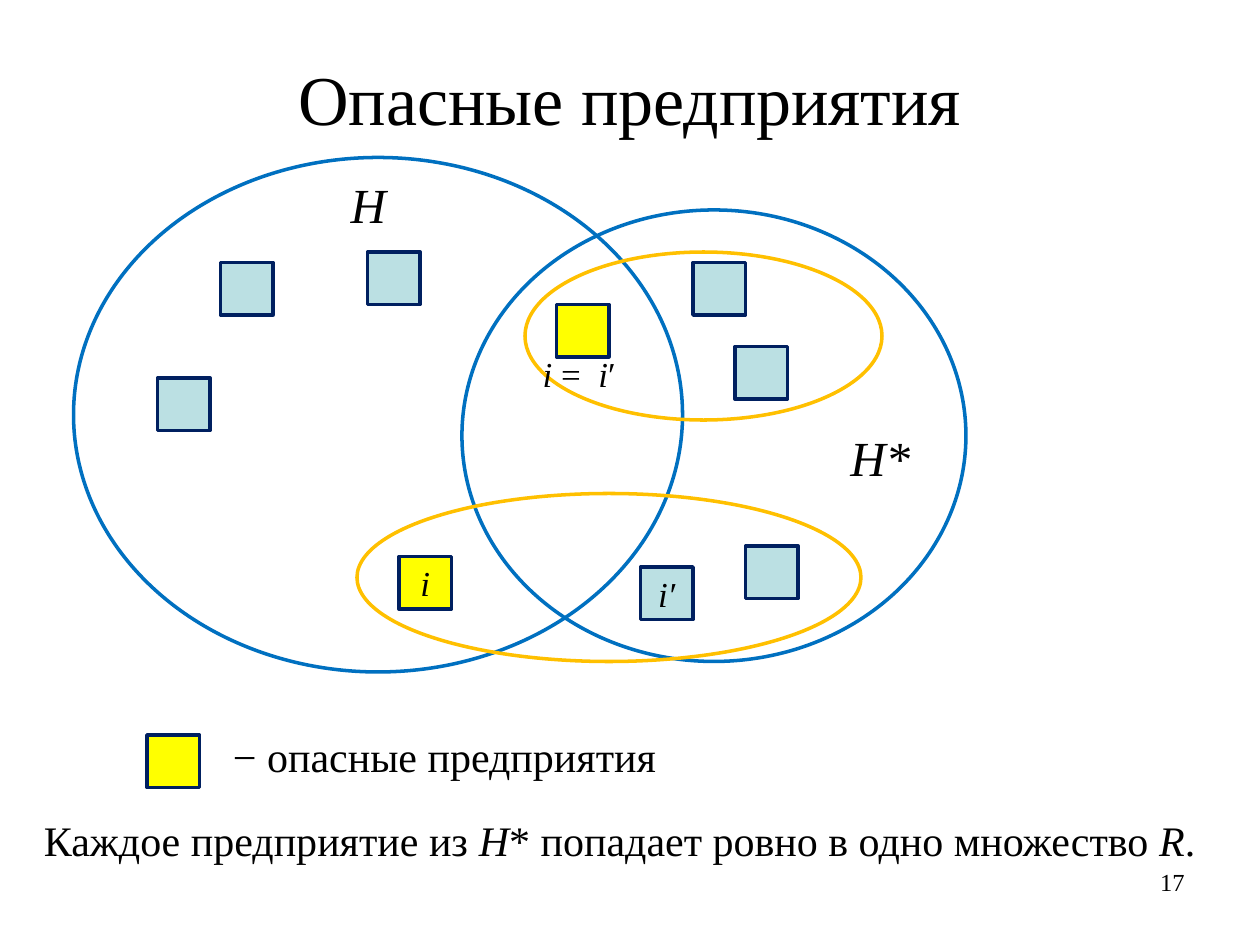
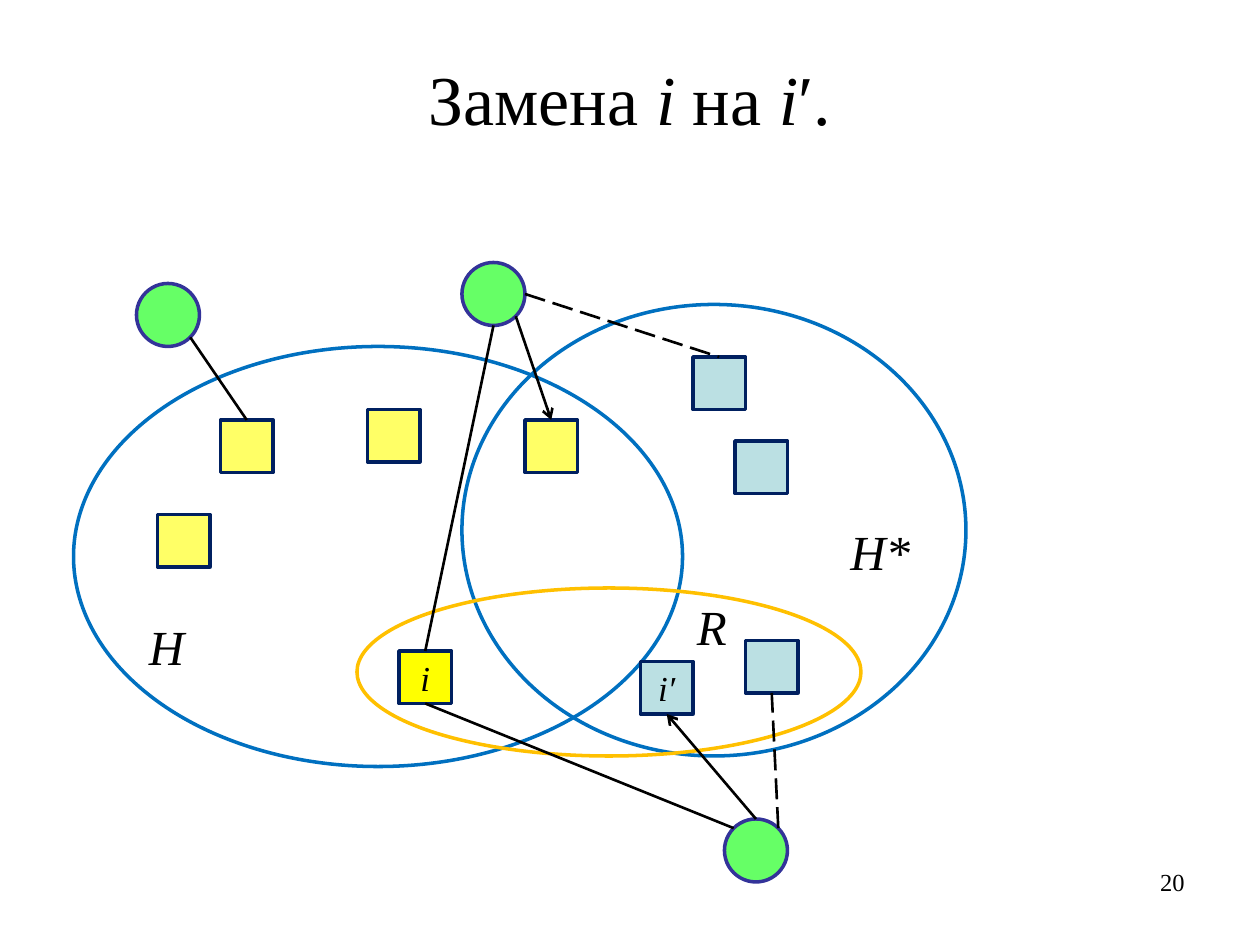
from math import cos, radians, sin
from typing import NamedTuple

from lxml import etree
from pptx import Presentation
from pptx.dml.color import RGBColor
from pptx.enum.dml import MSO_LINE
from pptx.enum.shapes import MSO_CONNECTOR, MSO_SHAPE
from pptx.enum.text import MSO_ANCHOR, MSO_AUTO_SIZE, PP_ALIGN
from pptx.oxml.ns import qn
from pptx.shapes.autoshape import Shape
from pptx.slide import Slide
from pptx.text.text import TextFrame
from pptx.util import Cm, Length, Pt

BLACK = RGBColor(0x00, 0x00, 0x00)
SET_BLUE = RGBColor(0x00, 0x70, 0xC0)
GROUP_ORANGE = RGBColor(0xFF, 0xC0, 0x00)
FACILITY_BORDER = RGBColor(0x00, 0x20, 0x60)
FACILITY_BLUE = RGBColor(0xBB, 0xE0, 0xE3)
YELLOW = RGBColor(0xFF, 0xFF, 0x00)
PALE_YELLOW = RGBColor(0xFF, 0xFF, 0x66)
CLIENT_GREEN = RGBColor(0x66, 0xFF, 0x66)
CLIENT_BORDER = RGBColor(0x33, 0x33, 0x99)

ELLIPSE = MSO_SHAPE.OVAL
SQUARE = MSO_SHAPE.FLOWCHART_PROCESS
CIRCLE = MSO_SHAPE.FLOWCHART_CONNECTOR
LEFT, CENTER, RIGHT = PP_ALIGN.LEFT, PP_ALIGN.CENTER, PP_ALIGN.RIGHT
TOP_SITE, BOTTOM_SITE = 0, 2

FONT = "Times New Roman"
TITLE_SIZE, SET_SIZE, BODY_SIZE, MARK_SIZE, NUMBER_SIZE = 40, 28, 24, 20, 14
CELLS_PER_INCH = 12
FACILITY_SIDE = 5
CLIENT_RADIUS = 3


class Box(NamedTuple):
    """Left, top, width and height in grid cells."""
    left: float
    top: float
    width: float
    height: float


class Run(NamedTuple):
    text: str
    italic: bool = False


class Facility(NamedTuple):
    left: float
    top: float
    fill: RGBColor = FACILITY_BLUE
    mark: str = ""


class Label(NamedTuple):
    box: Box
    size: int
    runs: list[Run]


class Link(NamedTuple):
    """A line from the rim of a client, at an angle clockwise from the right."""
    client: tuple[int, int]
    angle: float
    facility: Facility
    site: int
    dashed: bool = False
    arrow: bool = False


def cells(count: float) -> Length:
    return Cm(count * 2.54 / CELLS_PER_INCH)


def write(frame: TextFrame, runs: list[Run], size: int, alignment: PP_ALIGN) -> None:
    paragraph = frame.paragraphs[0]
    paragraph.alignment = alignment
    for item in runs:
        run = paragraph.add_run()
        run.text = item.text
        run.font.name = FONT
        run.font.size = Pt(size)
        run.font.italic = item.italic
        run.font.color.rgb = BLACK


def add_text(slide: Slide, box: Box, runs: list[Run], size: int,
             alignment: PP_ALIGN = LEFT) -> TextFrame:
    frame = slide.shapes.add_textbox(*map(cells, box)).text_frame
    frame.word_wrap = True
    write(frame, runs, size, alignment)
    return frame


def add_label(slide: Slide, label: Label) -> None:
    frame = add_text(slide, label.box, label.runs, label.size)
    frame.word_wrap = False
    frame.auto_size = MSO_AUTO_SIZE.SHAPE_TO_FIT_TEXT


def add_outlined(slide: Slide, preset: MSO_SHAPE, box: Box, line: RGBColor,
                 fill: RGBColor | None = None) -> Shape:
    shape = slide.shapes.add_shape(preset, *map(cells, box))
    shape.shadow.inherit = False
    shape.line.color.rgb = line
    shape.line.width = Pt(2)
    if fill is None:
        shape.fill.background()
    else:
        shape.fill.solid()
        shape.fill.fore_color.rgb = fill
    return shape


def add_facility(slide: Slide, facility: Facility) -> Shape:
    box = Box(facility.left, facility.top, FACILITY_SIDE, FACILITY_SIDE)
    shape = add_outlined(slide, SQUARE, box, FACILITY_BORDER, facility.fill)
    if facility.mark:
        frame = shape.text_frame
        frame.word_wrap = False
        frame.vertical_anchor = MSO_ANCHOR.MIDDLE
        write(frame, [Run(facility.mark, True)], MARK_SIZE, CENTER)
    return shape


def add_client(slide: Slide, center: tuple[int, int]) -> None:
    box = Box(center[0] - CLIENT_RADIUS, center[1] - CLIENT_RADIUS,
              2 * CLIENT_RADIUS, 2 * CLIENT_RADIUS)
    add_outlined(slide, CIRCLE, box, CLIENT_BORDER, CLIENT_GREEN)


def add_link(slide: Slide, link: Link, square: Shape) -> None:
    angle = radians(link.angle)
    start_x = cells(link.client[0] + CLIENT_RADIUS * cos(angle))
    start_y = cells(link.client[1] + CLIENT_RADIUS * sin(angle))
    connector = slide.shapes.add_connector(
        MSO_CONNECTOR.STRAIGHT, start_x, start_y, start_x, start_y)
    connector.end_connect(square, link.site)
    connector.line.color.rgb = BLACK
    connector.line.width = Pt(1.5)
    if link.dashed:
        connector.line.dash_style = MSO_LINE.LONG_DASH
    properties = connector._element.spPr
    if link.arrow:
        etree.SubElement(properties.find(qn("a:ln")), qn("a:tailEnd"), type="arrow")
    etree.SubElement(properties, qn("a:effectLst"))


def add_base_slide(presentation: Presentation, title: list[Run], number: int) -> Slide:
    slide = presentation.slides.add_slide(presentation.slide_layouts[6])
    add_text(slide, Box(86, 82, 28, 6.2), [Run(str(number))], NUMBER_SIZE, RIGHT)
    frame = add_text(slide, Box(6, 3.6, 108, 11.4), title, TITLE_SIZE, CENTER)
    frame.vertical_anchor = MSO_ANCHOR.MIDDLE
    return slide


def add_diagram(slide: Slide, sets: list[Box], groups: list[Box],
                facilities: list[Facility], labels: list[Label]) -> dict[Facility, Shape]:
    """Draw sets, facilities, groups and labels; return the square of each facility."""
    for box in sets:
        add_outlined(slide, ELLIPSE, box, SET_BLUE)
    squares = {facility: add_facility(slide, facility) for facility in facilities}
    for box in groups:
        add_outlined(slide, ELLIPSE, box, GROUP_ORANGE)
    for label in labels:
        add_label(slide, label)
    return squares


def set_label(left: float, top: float, width: float, name: str) -> Label:
    return Label(Box(left, top, width, 6.8), SET_SIZE, [Run(name, True)])


def optimal_set(top: int) -> Box:
    return Box(44, top, 48, 43)


def exchange_group(top: int) -> Box:
    return Box(34, top, 48, 16)


def optimal_facilities(top: int) -> list[Facility]:
    """The squares of H*, placed from the top of its ellipse."""
    return [Facility(38, top + 33, YELLOW, "i"), Facility(66, top + 5),
            Facility(70, top + 13), Facility(61, top + 34, mark="i′"),
            Facility(71, top + 32)]


def build_dangerous_facilities(presentation: Presentation) -> None:
    slide = add_base_slide(presentation, [Run("Опасные предприятия")], 17)
    top = 20
    facilities = [
        *optimal_facilities(top),
        Facility(21, 25), Facility(35, 24), Facility(15, 36),
        Facility(53, 29, YELLOW), Facility(14, 70, YELLOW),
    ]
    labels = [
        set_label(32.2, 16, 5.9, "H"),
        set_label(79.8, top + 20.1, 8.2, "H*"),
        Label(Box(50.5, 33, 9.5, 5.3), MARK_SIZE,
              [Run("i", True), Run(" =  "), Run("i", True), Run("′")]),
        Label(Box(21, 69, 43.1, 6), BODY_SIZE, [Run("− опасные предприятия")]),
        Label(Box(3, 77, 112.4, 6), BODY_SIZE,
              [Run("Каждое предприятие из "), Run("H", True),
               Run("* попадает ровно в одно множество "), Run("R", True), Run(".")]),
    ]
    add_diagram(slide, [Box(7, 15, 58, 49), optimal_set(top)],
                [exchange_group(top + 27), Box(50, 24, 34, 16)], facilities, labels)


def build_exchange(presentation: Presentation) -> None:
    title = [Run("Замена "), Run("i ", True), Run("на "), Run("i", True), Run("′.")]
    slide = add_base_slide(presentation, title, 20)
    top = 29
    optimal = optimal_facilities(top)
    replaced, far, _, replacement, neighbour = optimal
    left_facility = Facility(21, 40, PALE_YELLOW)
    common = Facility(50, 40, PALE_YELLOW)
    facilities = [*optimal, left_facility, Facility(35, 39, PALE_YELLOW),
                  Facility(15, 49, PALE_YELLOW), common]
    labels = [
        set_label(13, 58.1, 5.9, "H"),
        set_label(79.8, top + 20.1, 8.2, "H*"),
        set_label(65.2, 56.2, 5.3, "R"),
    ]
    squares = add_diagram(slide, [Box(7, 33, 58, 40), optimal_set(top)],
                          [exchange_group(top + 27)], facilities, labels)

    lower, upper, outer = clients = [(72, 81), (47, 28), (16, 30)]
    for client in clients:
        add_client(slide, client)
    links = [
        Link(lower, 225, replaced, BOTTOM_SITE),
        Link(lower, 315, neighbour, BOTTOM_SITE, dashed=True),
        Link(lower, 270, replacement, BOTTOM_SITE, arrow=True),
        Link(upper, 90, replaced, TOP_SITE),
        Link(upper, 0, far, TOP_SITE, dashed=True),
        Link(upper, 45, common, TOP_SITE, arrow=True),
        Link(outer, 45, left_facility, TOP_SITE),
    ]
    for link in links:
        add_link(slide, link, squares[link.facility])


def main() -> None:
    presentation = Presentation()
    presentation.slide_width = Cm(25.4)
    presentation.slide_height = Cm(19.05)
    build_dangerous_facilities(presentation)
    build_exchange(presentation)
    presentation.save("out.pptx")


if __name__ == "__main__":
    main()
